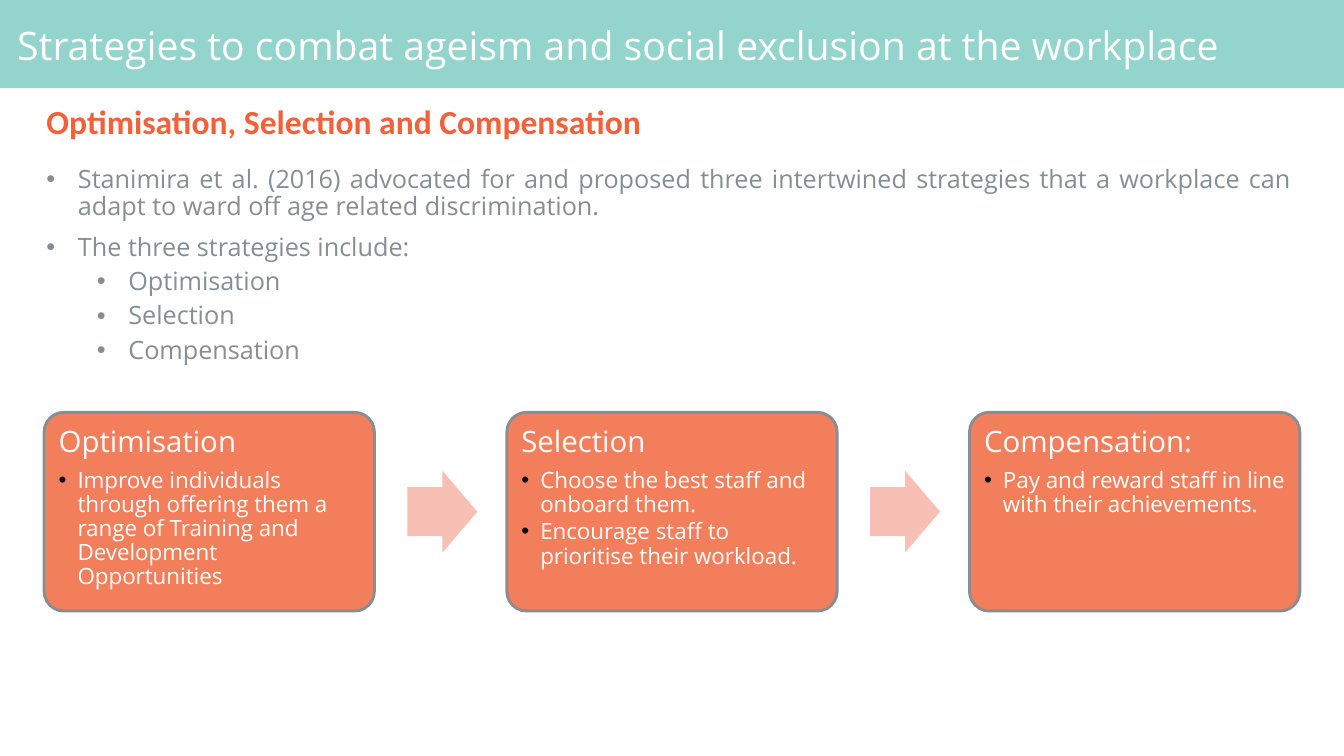
from pptx import Presentation
from pptx.dml.color import RGBColor
from pptx.enum import shapes, text
from pptx.oxml import ns
from pptx.util import Pt
from lxml import etree

MINT, CORAL, ORANGE, PINK = "93D4CC", "F27E5C", "F2613A", "F8BFB4"
GREY, WHITE, BLACK = "868E93", "FFFFFF", "000000"


def colour(hex_string):
    return RGBColor.from_string(hex_string)


def set_bullet(paragraph, bullet_colour):
    """Give the paragraph a round bullet, or none if there is no colour."""
    properties = paragraph._p.get_or_add_pPr()
    if bullet_colour is None:
        etree.SubElement(properties, ns.qn("a:buNone"))
        return
    holder = etree.SubElement(properties, ns.qn("a:buClr"))
    etree.SubElement(holder, ns.qn("a:srgbClr"), val=bullet_colour)
    etree.SubElement(properties, ns.qn("a:buFont"), typeface="Arial")
    etree.SubElement(properties, ns.qn("a:buChar"), char="•")


class SlideBuilder:
    font = "Open Sans"
    line_spacing = 0.9

    def __init__(self, slide):
        self.slide = slide

    def shape(self, kind, left, top, width, height, fill, line=None):
        shape = self.slide.shapes.add_shape(
            kind, Pt(left), Pt(top), Pt(width), Pt(height))
        shape.shadow.inherit = False
        shape.fill.solid()
        shape.fill.fore_color.rgb = colour(fill)
        if line:
            shape.line.color.rgb = colour(line)
            shape.line.width = Pt(2)
        else:
            shape.line.fill.background()
        return shape

    def frame(self, shape, anchor, side, end):
        """Prepare the text frame of a shape with its margins."""
        frame = shape.text_frame
        frame.word_wrap = True
        frame.auto_size = text.MSO_AUTO_SIZE.NONE
        frame.vertical_anchor = anchor
        frame.margin_left = frame.margin_right = Pt(side)
        frame.margin_top = frame.margin_bottom = Pt(end)
        return frame

    def placeholder(self, index, left, top, width, height, anchor, side, end):
        holder = self.slide.placeholders[index]
        holder.left, holder.top = Pt(left), Pt(top)
        holder.width, holder.height = Pt(width), Pt(height)
        return self.frame(holder, anchor, side, end)

    def paragraph(self, paragraph, words, size, ink, before=0, margin=0,
                  hanging=0, bullet=None, level=0, justify=False,
                  font=None, bold=False):
        paragraph.text = words
        paragraph.level = level
        paragraph.alignment = (text.PP_ALIGN.JUSTIFY if justify
                               else text.PP_ALIGN.LEFT)
        paragraph.line_spacing = self.line_spacing
        paragraph.space_before, paragraph.space_after = Pt(before), Pt(0)
        properties = paragraph._p.get_or_add_pPr()
        properties.set("marL", str(Pt(margin)))
        properties.set("indent", str(Pt(-hanging)))
        set_bullet(paragraph, bullet)
        for run in paragraph.runs:
            run.font.name = font or self.font
            run.font.size = Pt(size)
            run.font.bold = bold
            run.font.color.rgb = colour(ink)

    def title(self, words):
        band = self.shape(shapes.MSO_SHAPE.RECTANGLE, 0, 0, 960, 63, MINT)
        self.slide.shapes.title.element.addprevious(band.element)
        frame = self.placeholder(0, 8, 6.5, 940, 56,
                                 text.MSO_ANCHOR.MIDDLE, 4.3, 4.3)
        self.paragraph(frame.paragraphs[0], words, 28, WHITE)

    def heading(self, words):
        frame = self.placeholder(1, 8, 67, 940, 43,
                                 text.MSO_ANCHOR.MIDDLE, 7.2, 3.6)
        self.paragraph(frame.paragraphs[0], words, 24, ORANGE, before=10,
                       margin=36, hanging=18, justify=True,
                       font="Calibri", bold=True)

    def bullet_list(self, items):
        """Fill the list from (level, words) pairs."""
        frame = self.placeholder(2, 8, 115.2, 921.6, 402.5,
                                 text.MSO_ANCHOR.TOP, 7.2, 3.6)
        for number, (level, words) in enumerate(items):
            paragraph = frame.add_paragraph() if number else frame.paragraphs[0]
            self.paragraph(paragraph, words, 18, GREY,
                           before=5 if level else 10,
                           margin=40.5 + 36 * level, hanging=22.5,
                           bullet=GREY, level=level, justify=level == 0)

    def card(self, left, top, heading, points):
        card = self.shape(shapes.MSO_SHAPE.ROUNDED_RECTANGLE,
                          left, top, 236, 142, CORAL, GREY)
        card.adjustments[0] = 0.1
        frame = self.frame(card, text.MSO_ANCHOR.TOP, 6.3, 6.3)
        self.paragraph(frame.paragraphs[0], heading, 21, WHITE)
        for number, point in enumerate(points):
            self.paragraph(frame.add_paragraph(), point, 16, WHITE,
                           before=2.4 if number else 7.3, margin=13.5,
                           hanging=13.5, bullet=BLACK, level=1)

    def arrow(self, left, top):
        arrow = self.shape(shapes.MSO_SHAPE.RIGHT_ARROW,
                           left, top, 50, 58.5, PINK)
        arrow.adjustments[0] = 0.6
        arrow.adjustments[1] = 0.5


def main():
    presentation = Presentation()
    presentation.slide_width, presentation.slide_height = Pt(960), Pt(540)
    two_content = presentation.slide_layouts[3]
    builder = SlideBuilder(presentation.slides.add_slide(two_content))

    builder.title("Strategies to combat ageism and social exclusion "
                  "at the workplace")
    builder.heading("Optimisation, Selection and Compensation")
    builder.bullet_list([
        (0, "Stanimira et al. (2016) advocated for and proposed three "
            "intertwined strategies that a workplace can adapt to ward off "
            "age related discrimination."),
        (0, "The three strategies include:"),
        (1, "Optimisation"),
        (1, "Selection"),
        (1, "Compensation"),
    ])

    strategies = [
        ("Optimisation", ["Improve individuals through offering them a range "
                          "of Training and Development Opportunities"]),
        ("Selection", ["Choose the best staff and onboard them.",
                       "Encourage staff to prioritise their workload."]),
        ("Compensation:", ["Pay and reward staff in line with their "
                           "achievements."]),
    ]
    first_left, pitch, top = 31.5, 330.5, 294.5
    for number, (heading, points) in enumerate(strategies):
        left = first_left + number * pitch
        if number:
            builder.arrow(left - 71, top + 41.75)
        builder.card(left, top, heading, points)

    presentation.save("out.pptx")


if __name__ == "__main__":
    main()
